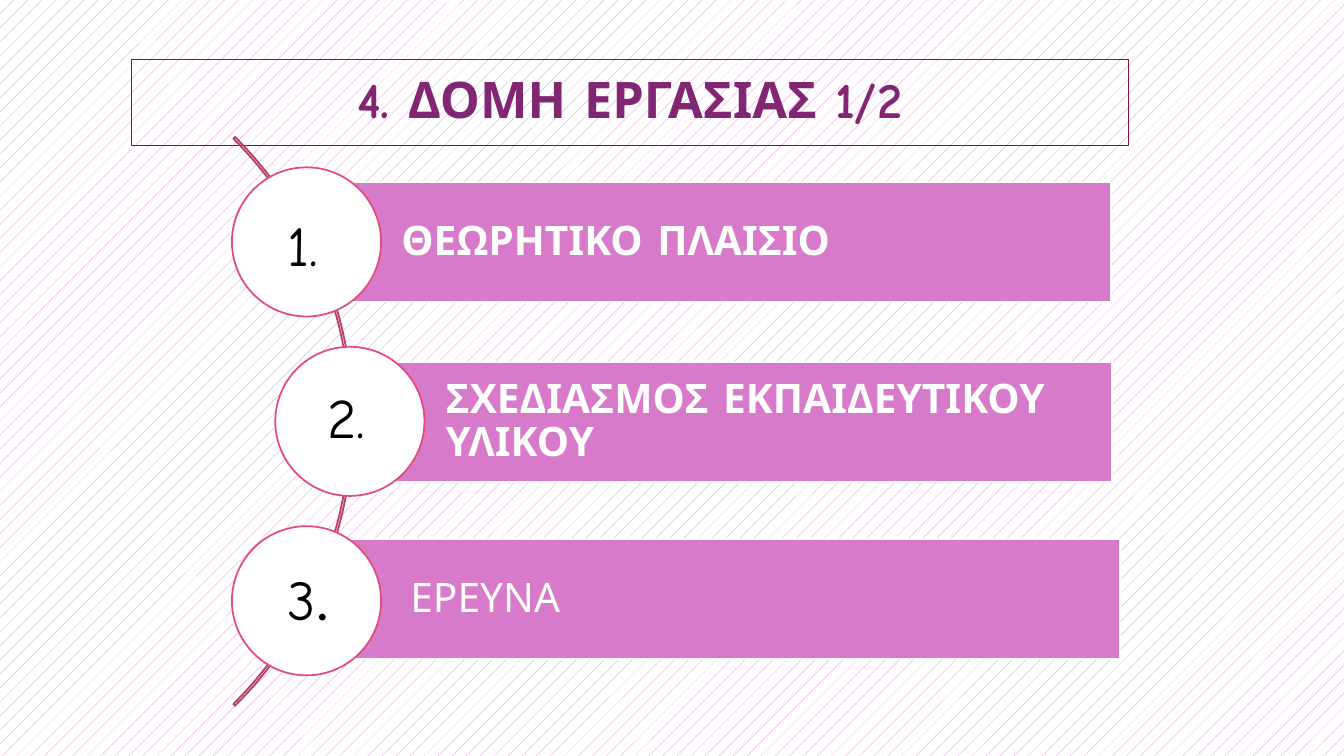
import pptx
import pptx.dml.color
import pptx.enum.dml
import pptx.enum.shapes
import pptx.enum.text
import pptx.util
from dataclasses import dataclass

Inches = pptx.util.Inches
Shapes = pptx.enum.shapes.MSO_SHAPE
Anchor = pptx.enum.text.MSO_ANCHOR
Align = pptx.enum.text.PP_ALIGN


@dataclass(frozen=True)
class Theme:
    font: str = "Comic Neue"
    dot_font: str = "Calibri"
    orchid: str = "D87ACA"
    white: str = "FFFFFF"
    black: str = "000000"
    title: str = "812673"
    frame: str = "831436"
    arc: str = "B63C62"
    ring: str = "E34B7A"
    title_size: int = 36
    bar_size: int = 29
    number_size: int = 40
    frame_width: float = 0.75
    line_width: float = 1.25


THEME = Theme()

BAR_HEIGHT = 1.19
CIRCLE_SIZE = 1.48
CIRCLE_TOP = 1.66
CIRCLE_STEP = 1.78

SECTIONS = [
    ("ΘΕΩΡΗΤΙΚΟ ΠΛΑΙΣΙΟ", True, (3.04, 1.81, 7.98), 2.3, (2.75, 2.04)),
    ("ΣΧΕΔΙΑΣΜΟΣ ΕΚΠΑΙΔΕΥΤΙΚΟΥ ΥΛΙΚΟΥ", True, (3.48, 3.59, 7.55), 2.73, (3.15, 3.75)),
    ("ΕΡΕΥΝΑ", False, (3.13, 5.35, 7.98), 2.3, (2.75, 5.55)),
]
NUMBERS = [
    [("1.", THEME.font)],
    [("2.", THEME.font)],
    [("3", THEME.font), (".", THEME.dot_font)],
]


def rgb(value):
    return pptx.dml.color.RGBColor.from_string(value)


def set_line(shape, color, width):
    shape.line.color.rgb = rgb(color)
    shape.line.width = pptx.util.Pt(width)


def set_font(font, size, color, bold=False, name=THEME.font):
    font.name = name
    font.size = pptx.util.Pt(size)
    font.bold = bold
    font.color.rgb = rgb(color)


def set_background(slide):
    fill = slide.background.fill
    fill.patterned()
    fill.pattern = pptx.enum.dml.MSO_PATTERN.PERCENT_5
    fill.fore_color.rgb = rgb(THEME.orchid)
    fill.back_color.rgb = rgb(THEME.white)


def add_title(slide, text):
    title = slide.shapes.title
    title.left, title.top = Inches(1.3), Inches(0.59)
    title.width, title.height = Inches(9.89), Inches(0.85)
    set_line(title, THEME.frame, THEME.frame_width)
    frame = title.text_frame
    frame.text = text
    frame.auto_size = pptx.enum.text.MSO_AUTO_SIZE.NONE
    frame.vertical_anchor = Anchor.MIDDLE
    paragraph = frame.paragraphs[0]
    paragraph.alignment = Align.CENTER
    paragraph.line_spacing = 0.9
    set_font(paragraph.font, THEME.title_size, THEME.title, True)


def add_outlined(slide, kind, left, top, width, height, line, fill=None):
    shape = slide.shapes.add_shape(
        kind, Inches(left), Inches(top), Inches(width), Inches(height)
    )
    shape.shadow.inherit = False
    if fill:
        shape.fill.solid()
        shape.fill.fore_color.rgb = rgb(fill)
    else:
        shape.fill.background()
    set_line(shape, line, THEME.line_width)
    return shape


def add_arc(slide):
    arc = add_outlined(
        slide, Shapes.BLOCK_ARC, -4.48, 0.19, 7.98, 7.98, THEME.arc
    )
    for index, value in enumerate((189, 27, 0.003)):
        arc.adjustments[index] = value


def add_bar(slide, text, bold, left, top, width):
    bar = add_outlined(
        slide, Shapes.RECTANGLE, left, top, width, BAR_HEIGHT, THEME.white, THEME.orchid
    )
    frame = bar.text_frame
    frame.text = text
    frame.word_wrap = True
    frame.vertical_anchor = Anchor.MIDDLE
    frame.margin_left = Inches(0.94)
    frame.margin_top = frame.margin_right = frame.margin_bottom = Inches(0.08)
    paragraph = frame.paragraphs[0]
    paragraph.alignment = Align.LEFT
    paragraph.line_spacing = 0.9
    set_font(paragraph.font, THEME.bar_size, THEME.white, bold)


def add_number(slide, parts, left, top):
    box = slide.shapes.add_textbox(
        Inches(left), Inches(top), Inches(0.8), Inches(0.77)
    )
    box.text_frame.word_wrap = True
    paragraph = box.text_frame.paragraphs[0]
    for text, font_name in parts:
        run = paragraph.add_run()
        run.text = text
        set_font(run.font, THEME.number_size, THEME.black, name=font_name)


def main():
    presentation = pptx.Presentation()
    presentation.slide_width = Inches(13.33)
    presentation.slide_height = Inches(7.5)
    slide = presentation.slides.add_slide(presentation.slide_layouts[5])
    set_background(slide)
    add_title(slide, "4. ΔΟΜΗ ΕΡΓΑΣΙΑΣ 1/2")
    add_arc(slide)
    for index, (text, bold, bar, circle_left, number) in enumerate(SECTIONS):
        add_bar(slide, text, bold, *bar)
        circle_top = CIRCLE_TOP + index * CIRCLE_STEP
        add_outlined(
            slide, Shapes.OVAL, circle_left, circle_top,
            CIRCLE_SIZE, CIRCLE_SIZE, THEME.ring, THEME.white,
        )
        add_number(slide, NUMBERS[index], *number)
    presentation.save("out.pptx")


if __name__ == "__main__":
    main()
